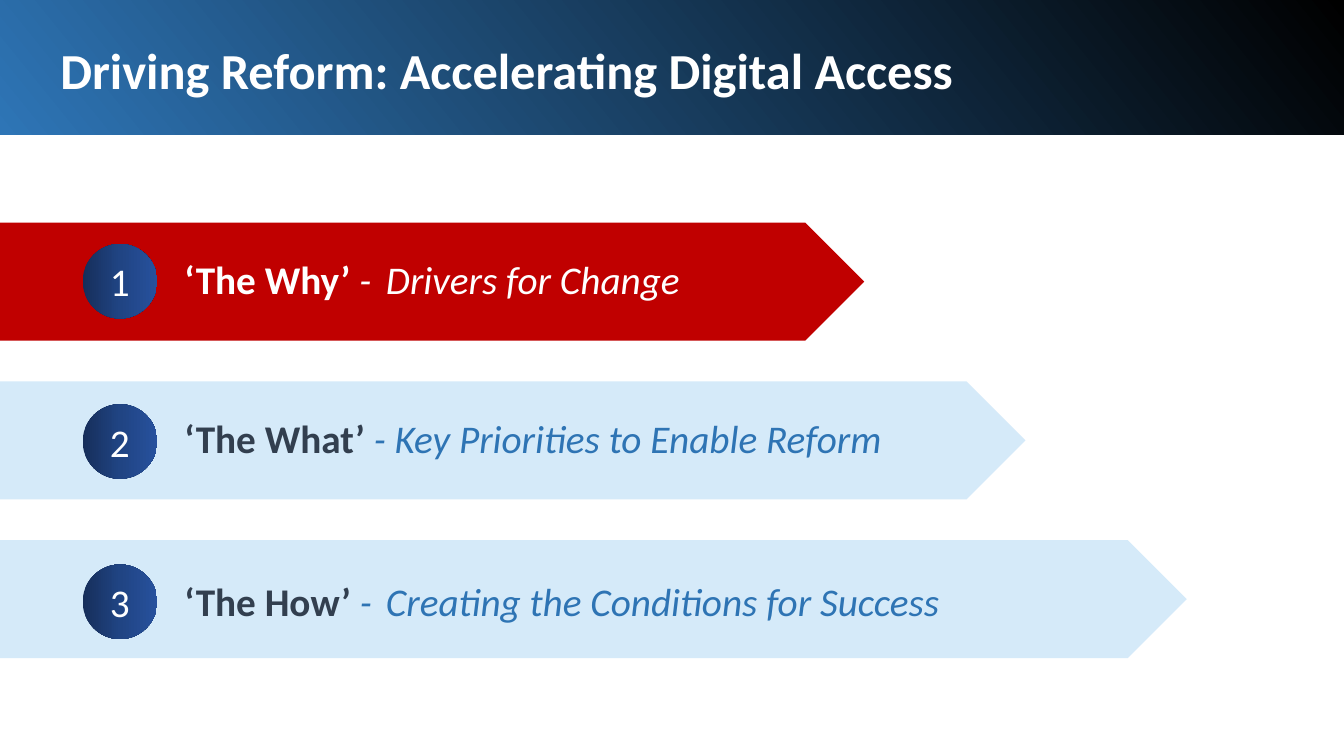
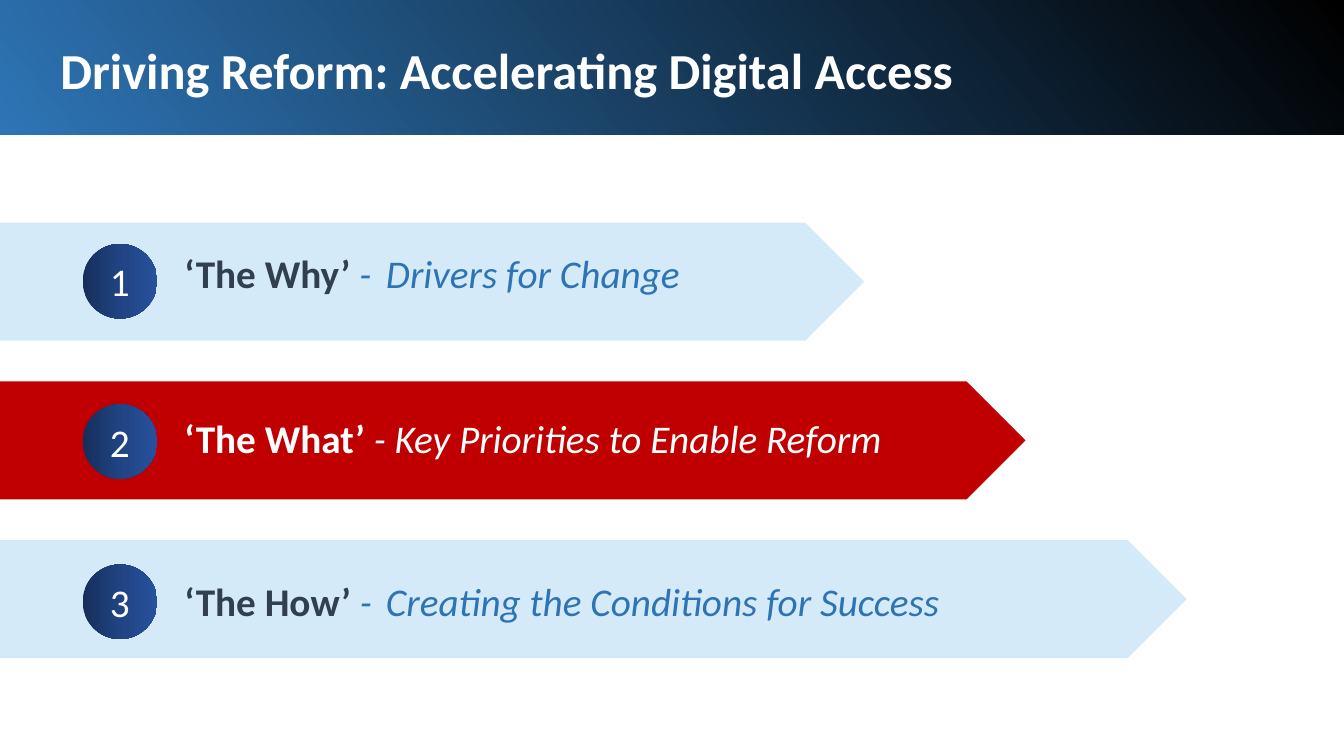
from dataclasses import dataclass

from lxml import etree
from pptx import Presentation
from pptx import util as u
from pptx.dml.color import RGBColor
from pptx.enum import shapes, text
from pptx.oxml.ns import qn


@dataclass(frozen=True)
class Theme:
    font: str = "Calibri"
    title_size: int = 36
    body_size: int = 28
    white: str = "FFFFFF"
    ink: str = "323F4F"
    accent: str = "2E74B4"
    active: str = "C00000"
    resting: str = "D5EAF9"
    band: tuple = ((0, "000000"), (100, "2E75B6"))
    badge: tuple = ((0, "162E5A"), (50, "204483"), (100, "27519D"))


class Agenda:
    def __init__(self, theme):
        self.theme = theme
        self.deck = Presentation()
        self.deck.slide_width = u.Inches(13.33)
        self.deck.slide_height = u.Inches(7.5)
        self.page = None

    def new_page(self):
        self.page = self.deck.slides.add_slide(self.deck.slide_layouts[6])

    def place(self, left, top, width, height):
        across, down = self.deck.slide_width, self.deck.slide_height
        shares = ((left, across), (top, down), (width, across), (height, down))
        return [round(share * side / 100) for share, side in shares]

    def shape(self, kind, area):
        shape = self.page.shapes.add_shape(kind, *self.place(*area))
        shape.shadow.inherit = False
        shape.line.fill.background()
        return shape

    def gradient(self, shape, stops, angle):
        shape.fill.gradient()
        shape.fill.gradient_angle = angle
        stop_list = shape.element.spPr.find(".//" + qn("a:gsLst"))
        for stop in list(stop_list):
            stop_list.remove(stop)
        for position, color in stops:
            stop = etree.SubElement(stop_list, qn("a:gs"), pos=str(position * 1000))
            etree.SubElement(stop, qn("a:srgbClr"), val=color)

    def add_span(self, para, words, size, color, bold=False, italic=False):
        span = para.add_run()
        span.text = words
        font = span.font
        font.name, font.size = self.theme.font, u.Pt(size)
        font.bold, font.italic = bold, italic
        font.color.rgb = RGBColor.from_string(color)

    def text_line(self, area):
        box = self.page.shapes.add_textbox(*self.place(*area))
        box.text_frame.word_wrap = True
        return box.text_frame.paragraphs[0]

    def header(self, words):
        band = self.shape(shapes.MSO_SHAPE.RECTANGLE, (0, 0, 100, 17.75))
        self.gradient(band, self.theme.band, 219)
        para = self.text_line((3.75, 4.53, 73.75, 9.47))
        self.add_span(para, words, self.theme.title_size, self.theme.white, bold=True)

    def arrow(self, row, active):
        area = (0, 29.45 + 21 * row, 64.3 + 12 * row, 15.6)
        arrow = self.shape(shapes.MSO_SHAPE.PENTAGON, area)
        arrow.fill.solid()
        color = self.theme.active if active else self.theme.resting
        arrow.fill.fore_color.rgb = RGBColor.from_string(color)

    def badge(self, row):
        area = (6.15, 32.27 + 21.2 * row, 5.55, 9.87)
        badge = self.shape(shapes.MSO_SHAPE.OVAL, area)
        self.gradient(badge, self.theme.badge, 0)
        badge.text_frame.vertical_anchor = text.MSO_ANCHOR.MIDDLE
        para = badge.text_frame.paragraphs[0]
        para.alignment = text.PP_ALIGN.CENTER
        self.add_span(para, str(row + 1), self.theme.body_size, self.theme.white)

    def label(self, top, name, detail, active):
        theme = self.theme
        name_color, detail_color = (
            (theme.white, theme.white) if active else (theme.ink, theme.accent)
        )
        para = self.text_line((12.98, top, 68, 7.6))
        self.add_span(para, name, theme.body_size, name_color, bold=True)
        self.add_span(para, detail, theme.body_size, detail_color, italic=True)


TITLE = "Driving Reform: Accelerating Digital Access"
TOPICS = (
    ("‘The Why’ ", "- \tDrivers for Change"),
    ("‘The What’ ", "- Key Priorities to Enable Reform"),
    ("‘The How’ ", "- \tCreating the Conditions for Success"),
)
LABEL_TOPS = ((33.07, 54.13, 75.73), (32.27, 54.13, 75.73))


def main():
    agenda = Agenda(Theme())
    for current, label_tops in enumerate(LABEL_TOPS):
        agenda.new_page()
        agenda.header(TITLE)
        for row, (topic, top) in enumerate(zip(TOPICS, label_tops)):
            active = row == current
            agenda.arrow(row, active)
            agenda.badge(row)
            agenda.label(top, *topic, active)
    agenda.deck.save("out.pptx")


if __name__ == "__main__":
    main()
